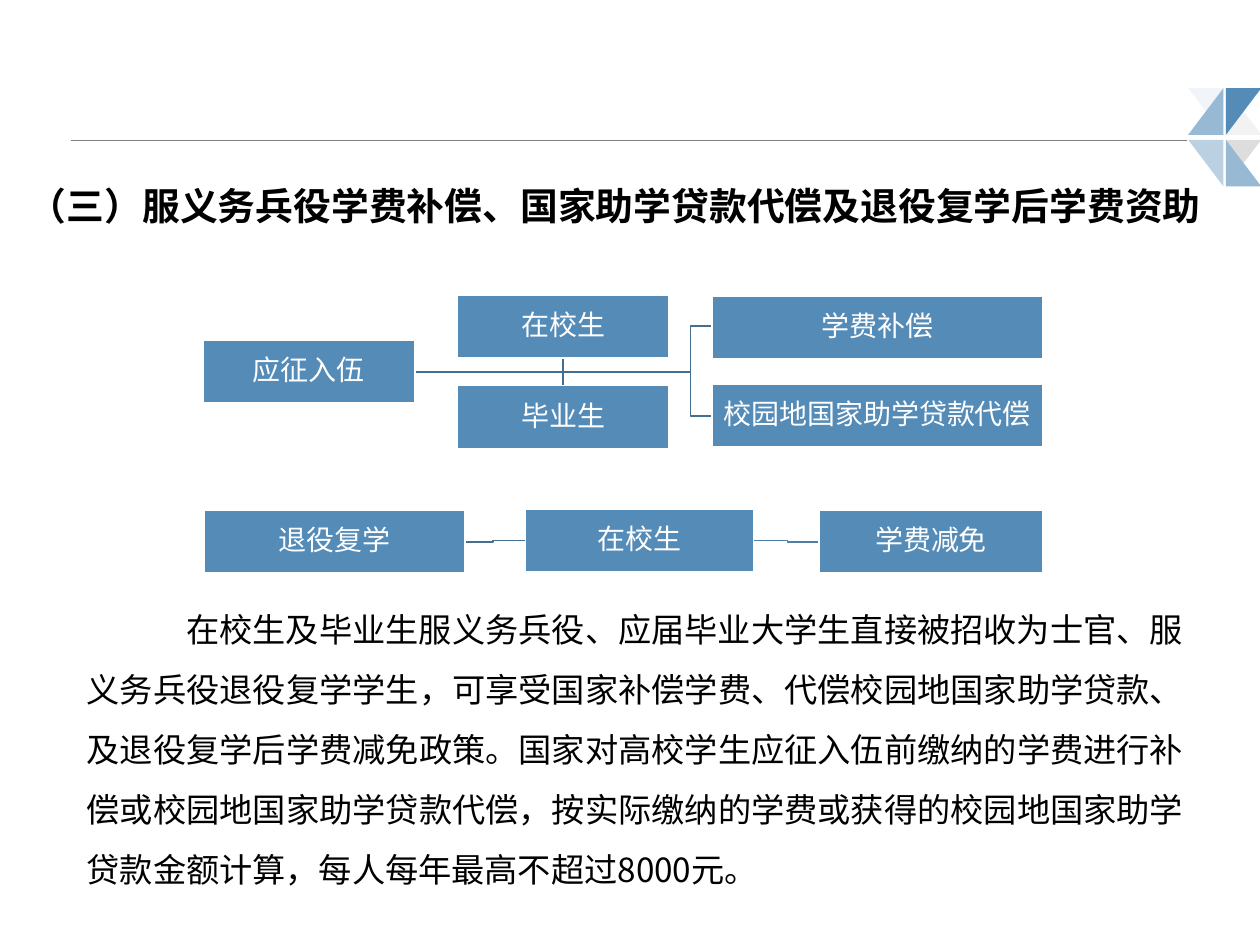
from lxml.etree import SubElement
from pptx import Presentation
from pptx.dml.color import RGBColor
from pptx.enum.shapes import MSO_CONNECTOR, MSO_SHAPE
from pptx.enum.text import MSO_ANCHOR, PP_ALIGN
from pptx.oxml.ns import qn
from pptx.util import Inches, Pt

CJK = "Noto Sans CJK SC"
BLUE, LIGHT, PALE, DARK = "548BB7", "98B9D4", "BBD1E2", "436F93"


def rgb(value):
    return RGBColor.from_string(value)


def write(tf, text, size, font=CJK, color="000000", bold=False,
          align=PP_ALIGN.CENTER, anchor=MSO_ANCHOR.TOP, spacing=1.0,
          indent=0, margins=(0.1, 0.05)):
    """Fill a text frame with one formatted paragraph."""
    tf.word_wrap = True
    tf.vertical_anchor = anchor
    tf.margin_left = tf.margin_right = Inches(margins[0])
    tf.margin_top = tf.margin_bottom = Inches(margins[1])
    p = tf.paragraphs[0]
    p.alignment = align
    p.line_spacing = spacing
    if indent:
        p._p.get_or_add_pPr().set("indent", str(Inches(indent)))
    r = p.add_run()
    r.text = text
    r.font.size = Pt(size)
    r.font.name = font
    r.font.bold = bold
    r.font.color.rgb = rgb(color)
    SubElement(r._r.get_or_add_rPr(), qn("a:ea"), typeface=CJK)


class Canvas:
    """Current slide and the style of its elements."""

    def __init__(self, slide):
        self.shapes = slide.shapes

    def text(self, x, y, w, h, text, **fmt):
        sp = self.shapes.add_textbox(Inches(x), Inches(y), Inches(w), Inches(h))
        write(sp.text_frame, text, **fmt)

    def box(self, x, y, w, text, h=0.5):
        sp = self.shapes.add_shape(MSO_SHAPE.RECTANGLE, Inches(x), Inches(y),
                                   Inches(w), Inches(h))
        sp.shadow.inherit = False
        sp.fill.solid()
        sp.fill.fore_color.rgb = rgb(BLUE)
        sp.line.color.rgb = rgb("FFFFFF")
        sp.line.width = Pt(1)
        write(sp.text_frame, text, size=16, font="Arial", color="FFFFFF",
              anchor=MSO_ANCHOR.MIDDLE, spacing=0.9, margins=(0.01, 0.01))

    def rule(self, x1, x2, y):
        line = self.shapes.add_connector(MSO_CONNECTOR.STRAIGHT, Inches(x1),
                                         Inches(y), Inches(x2), Inches(y))
        line.line.color.rgb = rgb("808080")
        line.line.width = Pt(0.25)
        SubElement(line._element.spPr, qn("a:effectLst"))

    def outline(self, points, close):
        pts = [(Inches(x), Inches(y)) for x, y in points]
        builder = self.shapes.build_freeform(*pts[0])
        builder.add_line_segments(pts[1:], close=close)
        sp = builder.convert_to_shape()
        sp.shadow.inherit = False
        return sp

    def elbow(self, points, color=DARK):
        sp = self.outline(points, close=False)
        sp.fill.background()
        sp.line.color.rgb = rgb(color)
        sp.line.width = Pt(1)

    def facet(self, x, y, corners, color, alpha=100, w=0.28, h=0.37):
        """Draw a filled polygon given in fractions of a tile."""
        sp = self.outline([(x + fx * w, y + fy * h) for fx, fy in corners], close=True)
        sp.line.fill.background()
        sp.fill.solid()
        sp.fill.fore_color.rgb = rgb(color)
        if alpha < 100:
            clr = sp._element.spPr.find(qn("a:solidFill"))[0]
            SubElement(clr, qn("a:alpha"), val=str(alpha * 1000))


def add_ornament(s):
    left, right, top, bottom = 9.43, 9.73, 0.7, 1.11
    tl, tr, bl, br = (0, 0), (1, 0), (0, 1), (1, 1)
    s.facet(right, top, [tl, bl, br], "BFBFBF", 20)
    s.facet(left, top, [tr, tl, br], PALE, 20)
    s.facet(right, top, [tr, tl, bl], BLUE)
    s.facet(right, bottom, [tr, tl, (0.5, 0.5)], "595959", 20)
    s.facet(left, top, [bl, br, tr], LIGHT)
    s.facet(left, bottom, [br, tr, tl], PALE)
    s.facet(right, bottom, [tl, bl, br], LIGHT)


def add_enlistment(s):
    start, mid = 3.3, 2.95
    for y in (3.06, 2.83):
        s.elbow([(start, mid), (4.47, mid), (4.47, y)])
    for y in (3.3, 2.59):
        s.elbow([(start, mid), (5.48, mid), (5.48, y), (5.65, y)])
    s.box(1.61, 2.7, 1.68, "应征入伍")
    for y, text in ((2.35, "学费补偿"), (3.05, "校园地国家助学贷款代偿")):
        s.box(5.65, y, 2.63, text)
    for y, text in ((2.34, "在校生"), (3.06, "毕业生")):
        s.box(3.63, y, 1.68, text)


def add_return_to_study(s):
    s.elbow([(5.98, 4.29), (6.25, 4.29), (6.25, 4.3), (6.5, 4.3)], "4C7EA6")
    s.elbow([(3.68, 4.3), (3.91, 4.3), (3.91, 4.29), (4.17, 4.29)])
    s.box(1.62, 4.05, 2.07, "退役复学")
    s.box(4.17, 4.04, 1.81, "在校生")
    s.box(6.5, 4.05, 1.78, "学费减免")


def main():
    prs = Presentation()
    prs.slide_width, prs.slide_height = Inches(10), Inches(7.5)
    s = Canvas(prs.slides.add_slide(prs.slide_layouts[6]))
    s.rule(0.56, 9.42, 1.11)
    add_ornament(s)
    s.text(0, 1.4, 9.76, 0.7,
           "（三）服义务兵役学费补偿、国家助学贷款代偿及退役复学后学费资助",
           size=21.6, bold=True)
    s.text(0.59, 4.63, 8.9, 2.49,
           "在校生及毕业生服义务兵役、应届毕业大学生直接被招收为士官、"
           "服义务兵役退役复学学生，可享受国家补偿学费、代偿校园地国家助学贷款、"
           "及退役复学后学费减免政策。国家对高校学生应征入伍前缴纳的学费进行补偿"
           "或校园地国家助学贷款代偿，按实际缴纳的学费或获得的校园地国家助学贷款"
           "金额计算，每人每年最高不超过8000元。",
           size=19, align=PP_ALIGN.JUSTIFY, spacing=1.5, indent=0.79)
    add_enlistment(s)
    add_return_to_study(s)
    prs.save("out.pptx")


if __name__ == "__main__":
    main()
